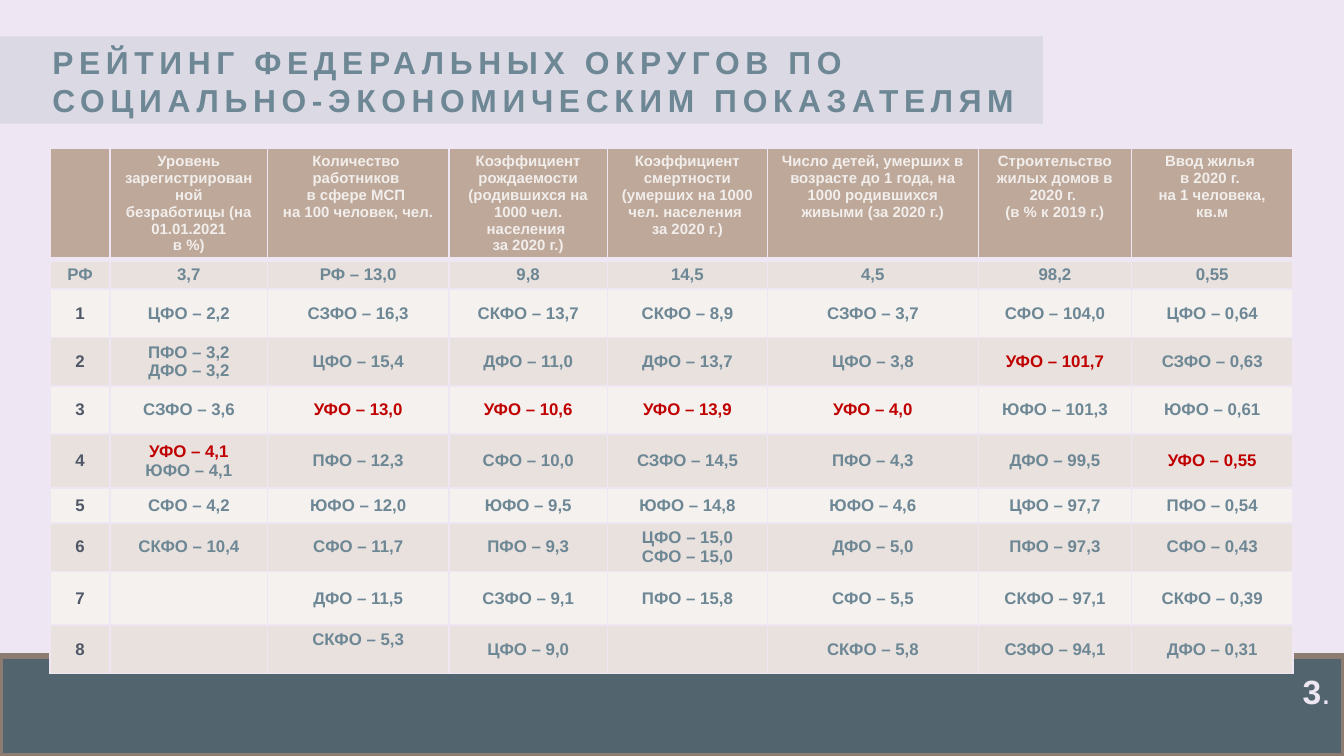
from dataclasses import dataclass

from lxml import etree
from pptx import Presentation
from pptx.dml.color import RGBColor
from pptx.enum.shapes import MSO_SHAPE
from pptx.enum.text import MSO_ANCHOR, PP_ALIGN
from pptx.oxml.ns import qn
from pptx.util import Inches, Pt

RECTANGLE = MSO_SHAPE.RECTANGLE
TOP, MIDDLE, BOTTOM = MSO_ANCHOR.TOP, MSO_ANCHOR.MIDDLE, MSO_ANCHOR.BOTTOM
LEFT, CENTER, RIGHT = PP_ALIGN.LEFT, PP_ALIGN.CENTER, PP_ALIGN.RIGHT


@dataclass(frozen=True)
class Theme:
    font: str = "Arial"
    background: str = "EEE6F3"
    footer: str = "52656F"
    footer_line: str = "8D7C72"
    title_band: str = "A7B7BF"
    text: str = "6D8794"
    rank: str = "505867"
    highlight: str = "C00000"
    header: str = "BEA89A"
    header_text: str = "F2EEEB"
    row_fills: tuple = ("E8E1DE", "F4F1EF")
    title_size: float = 17
    number_size: float = 18
    header_size: float = 8
    body_size: float = 9


THEME = Theme()
SLIDE_WIDTH = 10
SLIDE_HEIGHT = SLIDE_WIDTH * 9 / 16
TITLE = "РЕЙТИНГ ФЕДЕРАЛЬНЫХ ОКРУГОВ ПО СОЦИАЛЬНО-ЭКОНОМИЧЕСКИМ ПОКАЗАТЕЛЯМ"
COLUMN_WIDTHS = (0.45, 1.17, 1.35, 1.18, 1.19, 1.57, 1.14, 1.2)
ROW_HEIGHTS = (0.83, 0.22, 0.36, 0.36, 0.36, 0.4, 0.26, 0.36, 0.4, 0.36)
HEADERS = (
    "",
    "Уровень зарегистрированной безработицы (на 01.01.2021\nв %)",
    "Количество \vработников \vв сфере МСП \vна 100 человек, чел.",
    "Коэффициент рождаемости (родившихся на 1000 чел. населения \vза 2020 г.)",
    "Коэффициент смертности (умерших на 1000 чел. населения \vза 2020 г.)",
    "Число детей, умерших в возрасте до 1 года, на 1000 родившихся живыми (за 2020 г.)",
    "Строительство жилых домов в 2020 г. \v(в % к 2019 г.)",
    "Ввод жилья \vв 2020 г. \vна 1 человека, кв.м",
)
RANKING = (
    ("РФ", "3,7", "РФ – 13,0", "9,8", "14,5", "4,5", "98,2", "0,55"),
    ("1", "ЦФО – 2,2", "СЗФО – 16,3", "СКФО – 13,7", "СКФО – 8,9",
     "СЗФО – 3,7", "СФО – 104,0", "ЦФО – 0,64"),
    ("2", "ПФО – 3,2\nДФО – 3,2", "ЦФО – 15,4", "ДФО – 11,0", "ДФО – 13,7",
     "ЦФО – 3,8", "УФО – 101,7", "СЗФО – 0,63"),
    ("3", "СЗФО – 3,6", "УФО – 13,0", "УФО – 10,6", "УФО – 13,9",
     "УФО – 4,0", "ЮФО – 101,3", "ЮФО – 0,61"),
    ("4", "УФО – 4,1\nЮФО – 4,1", "ПФО – 12,3", "СФО – 10,0", "СЗФО – 14,5",
     "ПФО – 4,3", "ДФО – 99,5", "УФО – 0,55"),
    ("5", "СФО – 4,2", "ЮФО – 12,0", "ЮФО – 9,5", "ЮФО – 14,8",
     "ЮФО – 4,6", "ЦФО – 97,7", "ПФО – 0,54"),
    ("6", "СКФО – 10,4", "СФО – 11,7", "ПФО – 9,3", "ЦФО – 15,0\nСФО – 15,0",
     "ДФО – 5,0", "ПФО – 97,3", "СФО – 0,43"),
    ("7", "", "ДФО – 11,5", "СЗФО – 9,1", "ПФО – 15,8",
     "СФО – 5,5", "СКФО – 97,1", "СКФО – 0,39"),
    ("8", "", "СКФО – 5,3", "ЦФО – 9,0", "",
     "СКФО – 5,8", "СЗФО – 94,1", "ДФО – 0,31"),
)


def paint(fill, color):
    fill.solid()
    fill.fore_color.rgb = RGBColor.from_string(color)


def write(paragraph, text, *, size, color, bold=True, align=CENTER, spacing=0):
    paragraph.alignment = align
    for index, line in enumerate(text.split("\v")):
        if index:
            paragraph.add_line_break()
        run = paragraph.add_run()
        run.text = line
        run.font.name = THEME.font
        run.font.size = Pt(size)
        run.font.bold = bold
        run.font.color.rgb = RGBColor.from_string(color)
        if spacing:
            run._r.get_or_add_rPr().set("spc", str(spacing * 100))


def add_band(slide, box, color, anchor):
    shape = slide.shapes.add_shape(RECTANGLE, *map(Inches, box))
    shape.shadow.inherit = False
    paint(shape.fill, color)
    shape.line.fill.background()
    shape.text_frame.word_wrap = True
    shape.text_frame.vertical_anchor = anchor
    return shape


def add_footer(slide, box, number):
    shape = add_band(slide, box, THEME.footer, BOTTOM)
    paint(shape.line.fill, THEME.footer_line)
    shape.line.width = Pt(3.35)
    shape.text_frame.margin_bottom = Inches(0.34)
    paragraph = shape.text_frame.paragraphs[0]
    for text, bold in ((number, True), (".", False)):
        write(paragraph, text, size=THEME.number_size, color=THEME.background,
              bold=bold, align=RIGHT)


def add_title(slide, box):
    shape = add_band(slide, box, THEME.title_band, TOP)
    color = shape.fill._xPr.find(".//" + qn("a:srgbClr"))
    etree.SubElement(color, qn("a:alpha"), val="27000")
    shape.text_frame.margin_left = Inches(0.39)
    write(shape.text_frame.paragraphs[0], TITLE, size=THEME.title_size,
          color=THEME.text, align=LEFT, spacing=3)


def add_borders(cell, top, bottom):
    properties = cell._tc.get_or_add_tcPr()
    widths = {"lnL": 1, "lnR": 1, "lnT": top, "lnB": bottom}
    for position, (side, width) in enumerate(widths.items()):
        line = etree.Element(qn("a:" + side), w=str(Pt(width)))
        fill = etree.SubElement(line, qn("a:solidFill"))
        etree.SubElement(fill, qn("a:srgbClr"), val=THEME.background)
        properties.insert(position, line)


def fill_cell(cell, text, fill, anchor, size, color):
    paint(cell.fill, fill)
    cell.vertical_anchor = anchor
    cell.margin_left = cell.margin_right = Inches(0.1)
    cell.margin_top = cell.margin_bottom = Inches(0.04)
    frame = cell.text_frame
    for index, line in enumerate(text.split("\n")):
        paragraph = frame.add_paragraph() if index else frame.paragraphs[0]
        line_color = THEME.highlight if line.startswith("УФО") else color
        write(paragraph, line, size=size, color=line_color)


def add_ranking(slide, box):
    rows = (HEADERS, *RANKING)
    table = slide.shapes.add_table(
        len(rows), len(HEADERS), *map(Inches, box)).table
    table.horz_banding = False
    for column, width in zip(table.columns, COLUMN_WIDTHS):
        column.width = Inches(width)
    for row, height in zip(table.rows, ROW_HEIGHTS):
        row.height = Inches(height)
    for row_index, values in enumerate(rows):
        for column_index, text in enumerate(values):
            cell = table.cell(row_index, column_index)
            if row_index == 0:
                fill_cell(cell, text, THEME.header, TOP,
                          THEME.header_size, THEME.header_text)
            else:
                is_rank = column_index == 0 and row_index > 1
                fill_cell(cell, text, THEME.row_fills[(row_index - 1) % 2], MIDDLE,
                          THEME.body_size, THEME.rank if is_rank else THEME.text)
            add_borders(cell, top=3 if row_index == 1 else 1,
                        bottom=3 if row_index == 0 else 1)
    table.cell(len(rows) - 1, 2).vertical_anchor = TOP


def main():
    presentation = Presentation()
    presentation.slide_width = Inches(SLIDE_WIDTH)
    presentation.slide_height = Inches(SLIDE_HEIGHT)
    slide = presentation.slides.add_slide(presentation.slide_layouts[6])
    paint(slide.background.fill, THEME.background)
    add_footer(slide, (0, 4.88, SLIDE_WIDTH, 0.75), "3")
    add_title(slide, (0, 0.27, 7.76, 0.65))
    add_ranking(slide, (0.37, 1.1, sum(COLUMN_WIDTHS), sum(ROW_HEIGHTS)))
    presentation.save("out.pptx")


if __name__ == "__main__":
    main()
